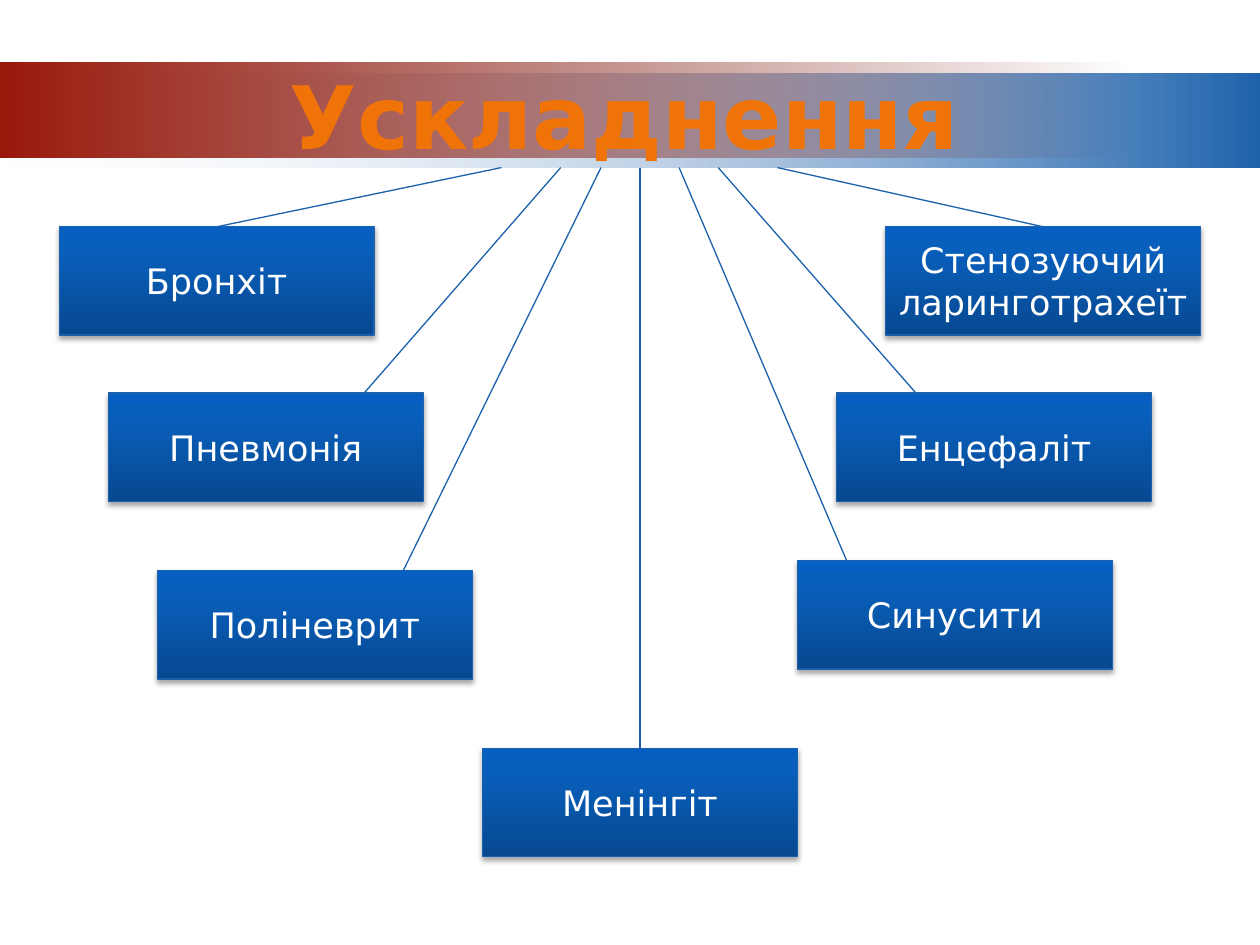
from lxml.etree import SubElement
from pptx import Presentation
from pptx.dml.color import RGBColor
from pptx.enum.shapes import MSO_CONNECTOR as Conn, MSO_SHAPE as Shape
from pptx.enum.text import MSO_ANCHOR as Anchor, MSO_AUTO_SIZE as AutoSize, PP_ALIGN as Align
from pptx.oxml.ns import qn
from pptx.util import Inches, Pt

COLORS = {
    "line": "1B61AD", "text": "FFFFFF", "shadow": "000000",
    "bar_pale": "F1F2F7", "bar_blue": "1F63AD",
    "bar_red": "99190B", "bar_dark": "6D1208",
    "box_low": "074991", "box_mid": "095FBC", "box_top": "065FC1",
    "title_top": "FFAE79", "title_mid": "F07307", "title_low": "9D6100",
}
COLS, ROWS = 10, 7.5
BOX_W, BOX_H = 2.5, 0.86
BAR_TOP, BAR_H = 0.58, 0.75
BAR_BOTTOM = BAR_TOP + BAR_H

COMPLICATIONS = [
    ("Бронхіт", 0.47, 1.8, 3.98, 1.72),
    ("Пневмонія", 0.86, 3.12, 4.45, 2.89),
    ("Стенозуючий ларинготрахеїт", 7.03, 1.8, 6.17, 8.28),
    ("Енцефаліт", 6.64, 3.12, 5.7, 7.27),
    ("Поліневрит", 1.25, 4.53, 4.77, 3.2),
    ("Синусити", 6.33, 4.45, 5.39, 6.72),
    ("Менінгіт", 3.83, 5.94, 5.08, 5.08),
]


class Deck:
    font = "DejaVu Sans"

    def __init__(self):
        self.prs = Presentation()
        self.prs.slide_width, self.prs.slide_height = Inches(10), Inches(7.5)
        self.slide = self.prs.slides.add_slide(self.prs.slide_layouts[5])
        self.shapes = self.slide.shapes

    def x(self, cols):
        return round(self.prs.slide_width * cols / COLS)

    def y(self, rows):
        return round(self.prs.slide_height * rows / ROWS)

    def place(self, left, top, width, height):
        return self.x(left), self.y(top), self.x(width), self.y(height)

    def color(self, parent, name, alpha=100):
        clr = SubElement(parent, qn("a:srgbClr"), val=COLORS[name])
        if alpha < 100:
            SubElement(clr, qn("a:alpha"), val=str(alpha * 1000))

    def gradient(self, fill, parent, stops, angle):
        fill.solid()
        solid = parent.find(qn("a:solidFill"))
        grad = SubElement(parent, qn("a:gradFill"), rotWithShape="1")
        parent.replace(solid, grad)
        stop_list = SubElement(grad, qn("a:gsLst"))
        for pos, name, alpha in stops:
            stop = SubElement(stop_list, qn("a:gs"), pos=str(pos * 1000))
            self.color(stop, name, alpha)
        SubElement(grad, qn("a:lin"), ang=str(angle * 60000), scaled="0")

    def set_text(self, sp, text, size, bold=False):
        tf = sp.text_frame
        tf.text = text
        tf.word_wrap = True
        tf.auto_size = AutoSize.NONE
        tf.vertical_anchor = Anchor.MIDDLE
        p = tf.paragraphs[0]
        p.alignment = Align.CENTER
        r = p.runs[0]
        r.font.name, r.font.size, r.font.bold = self.font, Pt(size), bold
        return r

    def rect(self, at, stops, angle):
        sp = self.shapes.add_shape(Shape.RECTANGLE, *self.place(*at))
        sp.shadow.inherit = False
        sp.line.fill.background()
        self.gradient(sp.fill, sp.element.spPr, stops, angle)
        return sp

    def title(self, text, at):
        sp = self.shapes.title
        sp.left, sp.top, sp.width, sp.height = self.place(*at)
        r = self.set_text(sp, text, 50, bold=True)
        stops = [(0, "title_top", 100), (75, "title_mid", 100), (100, "title_low", 100)]
        self.gradient(r.font.fill, sp.element.find(".//" + qn("a:rPr")), stops, 90)
        self.shapes.element.append(sp.element)

    def outline(self, line):
        line.color.rgb = RGBColor.from_string(COLORS["line"])
        line.width = Pt(0.75)

    def box(self, text, left, top):
        stops = [(0, "box_low", 100), (80, "box_mid", 100), (100, "box_top", 100)]
        sp = self.rect((left, top, BOX_W, BOX_H), stops, 270)
        self.outline(sp.line)
        shadow = SubElement(
            sp.element.spPr.find(qn("a:effectLst")), qn("a:outerShdw"),
            blurRad=str(Pt(3.1)), dist=str(Pt(1.8)), dir=str(90 * 60000), rotWithShape="0")
        self.color(shadow, "shadow", 35)
        r = self.set_text(sp, text, 20)
        r.font.color.rgb = RGBColor.from_string(COLORS["text"])

    def link(self, x1, y1, x2, y2):
        line = self.shapes.add_connector(
            Conn.STRAIGHT, self.x(x1), self.y(y1), self.x(x2), self.y(y2))
        self.outline(line.line)
        SubElement(line.element.spPr, qn("a:effectLst"))


def main():
    deck = Deck()
    deck.rect((0, BAR_TOP, 10, BAR_H), [(0, "bar_pale", 0), (100, "bar_blue", 100)], 0)
    deck.rect((0, 0.5, 9, BAR_H), [(0, "bar_red", 100), (100, "bar_dark", 0)], 0)
    deck.title("Ускладнення", (0.92, 0.6, 8.08, 0.62))
    for text, left, top, _, _ in COMPLICATIONS:
        deck.box(text, left, top)
    for _, _, top, start, end in COMPLICATIONS:
        deck.link(start, BAR_BOTTOM, end, top)
    deck.prs.save("out.pptx")


if __name__ == "__main__":
    main()
